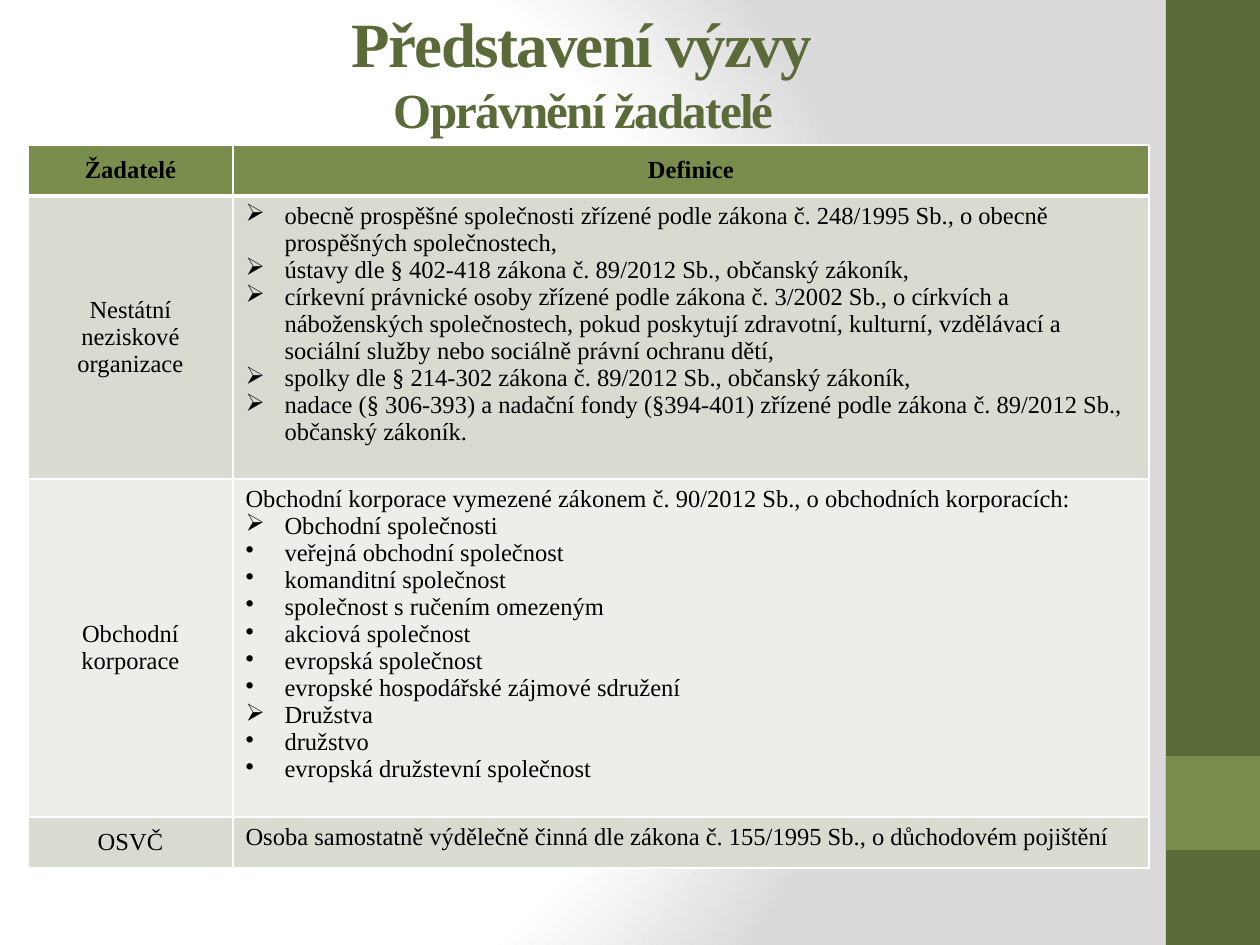
"""Build the slide listing the eligible applicants of a call."""
from dataclasses import dataclass

from pptx import Presentation
from pptx.dml.color import RGBColor
from pptx.enum.shapes import MSO_SHAPE
from pptx.enum.text import MSO_ANCHOR, PP_ALIGN
from pptx.oxml import parse_xml
from pptx.oxml.ns import nsdecls, qn
from pptx.util import Emu, Pt

DARK = RGBColor(0x5A, 0x6A, 0x39)
GREEN = RGBColor(0x79, 0x8E, 0x4C)
BAND = RGBColor(0xD7, 0xDB, 0xD0)
PALE = RGBColor(0xEC, 0xEE, 0xE9)
BLACK = RGBColor(0, 0, 0)
WHITE = RGBColor(0xFF, 0xFF, 0xFF)
GREY = RGBColor(0xDA, 0xDA, 0xDA)
FONT = "Times New Roman"
ARROW, DOT = "➢", "•"
INDENT = 39


@dataclass
class Block:
    x: int
    y: int
    w: int
    h: int
    color: RGBColor


@dataclass
class Item:
    text: str
    bullet: str = ""


@dataclass
class Row:
    height: int
    color: RGBColor
    label: str
    items: list[Item]
    align: PP_ALIGN = PP_ALIGN.JUSTIFY
    header: bool = False


def px(n: int) -> Emu:
    return Emu(round(n * 914400 / 126))


def bulleted(bullet: str, *texts: str) -> list[Item]:
    return [Item(text, bullet) for text in texts]


BLOCKS = [Block(1166, 0, 94, 945, DARK), Block(1166, 756, 94, 94, GREEN)]
COLUMNS = [205, 916]
ROWS = [
    Row(51, GREEN, "Žadatelé", [Item("Definice")], PP_ALIGN.CENTER, True),
    Row(283, BAND, "Nestátní neziskové organizace", bulleted(
        ARROW,
        "obecně prospěšné společnosti zřízené podle zákona č. 248/1995 Sb., "
        "o obecně prospěšných společnostech,",
        "ústavy dle § 402-418 zákona č. 89/2012 Sb., občanský zákoník,",
        "církevní právnické osoby zřízené podle zákona č. 3/2002 Sb., o církvích a "
        "náboženských společnostech, pokud poskytují zdravotní, kulturní, vzdělávací a "
        "sociální služby nebo sociálně právní ochranu dětí,",
        "spolky dle § 214-302 zákona č. 89/2012 Sb., občanský zákoník,",
        "nadace (§ 306-393) a nadační fondy (§394-401) zřízené podle zákona "
        "č. 89/2012 Sb., občanský zákoník.",
    ), PP_ALIGN.LEFT),
    Row(338, PALE, "Obchodní korporace", [
        Item("Obchodní korporace vymezené zákonem č. 90/2012 Sb., o obchodních korporacích:"),
        Item("Obchodní společnosti", ARROW),
        *bulleted(DOT, "veřejná obchodní společnost", "komanditní společnost",
                  "společnost s ručením omezeným", "akciová společnost",
                  "evropská společnost", "evropské hospodářské zájmové sdružení"),
        Item("Družstva", ARROW),
        *bulleted(DOT, "družstvo", "evropská družstevní společnost"),
    ]),
    Row(51, BAND, "OSVČ", [
        Item("Osoba samostatně výdělečně činná dle zákona č. 155/1995 Sb., "
             "o důchodovém pojištění"),
    ]),
]


def set_background(slide) -> None:
    slide.background.fill.gradient()
    grad = next(slide.element.iter(qn("a:gradFill")))
    stops = "".join(
        f'<a:gs pos="{pos}"><a:srgbClr val="{color}"/></a:gs>'
        for pos, color in ((0, WHITE), (75000, WHITE), (100000, GREY)))
    grad.getparent().replace(grad, parse_xml(
        f'<a:gradFill {nsdecls("a")} rotWithShape="1"><a:gsLst>{stops}</a:gsLst>'
        '<a:path path="circle"><a:fillToRect l="20000" t="50000" r="100000" b="50000"/>'
        '</a:path></a:gradFill>'))


def add_block(slide, block: Block) -> None:
    sp = slide.shapes.add_shape(MSO_SHAPE.RECTANGLE, px(block.x), px(block.y),
                                px(block.w), px(block.h))
    sp.shadow.inherit = False
    sp.fill.solid()
    sp.fill.fore_color.rgb = block.color
    sp.line.fill.background()


def style_font(r, size: int, color: RGBColor, bold: bool) -> None:
    r.font.name = FONT
    r.font.size = Pt(size)
    r.font.color.rgb = color
    r.font.bold = bold


def add_title(slide) -> None:
    tf = slide.shapes.add_textbox(px(64), px(-13), px(1050), px(157)).text_frame
    tf.word_wrap = True
    tf.vertical_anchor = MSO_ANCHOR.MIDDLE
    tf.margin_top, tf.margin_bottom = px(18), px(6)
    p = tf.paragraphs[0]
    p.text = "Představení výzvy \vOprávnění žadatelé "
    p.alignment = PP_ALIGN.CENTER
    for r, size in zip(p.runs, (36, 28)):
        style_font(r, size, DARK, True)
        r.font._element.set("spc", "-100")


def add_bullet(p, bullet: str) -> None:
    pPr = p._p.get_or_add_pPr()
    pPr.set("marL", str(px(INDENT)))
    pPr.set("indent", str(px(-INDENT)))
    pPr.append(parse_xml(f'<a:buChar {nsdecls("a")} char="{bullet}"/>'))


def set_borders(cell, top: int, bottom: int) -> None:
    tcPr = cell._tc.get_or_add_tcPr()
    for i, (side, width) in enumerate((("L", 1), ("R", 1), ("T", top), ("B", bottom))):
        tcPr.insert(i, parse_xml(
            f'<a:ln{side} {nsdecls("a")} w="{Pt(width)}"><a:solidFill>'
            f'<a:srgbClr val="{WHITE}"/></a:solidFill></a:ln{side}>'))


def fill_cell(cell, items: list[Item], align: PP_ALIGN, middle: bool,
              color: RGBColor, bold: bool) -> None:
    cell.fill.solid()
    cell.fill.fore_color.rgb = color
    cell.vertical_anchor = MSO_ANCHOR.MIDDLE if middle else MSO_ANCHOR.TOP
    tf = cell.text_frame
    tf.text = "\n".join(item.text for item in items)
    for p, item in zip(tf.paragraphs, items):
        p.alignment = align
        style_font(p.runs[0], 14, BLACK, bold)
        if item.bullet:
            add_bullet(p, item.bullet)


def add_applicants(slide) -> None:
    table = slide.shapes.add_table(
        len(ROWS), len(COLUMNS), px(28), px(145), px(sum(COLUMNS)),
        px(sum(row.height for row in ROWS))).table
    table.horz_banding = False
    for column, width in zip(table.columns, COLUMNS):
        column.width = px(width)
    for i, row in enumerate(ROWS):
        table.rows[i].height = px(row.height)
        label, definition = table.cell(i, 0), table.cell(i, 1)
        fill_cell(label, [Item(row.label)], PP_ALIGN.CENTER, True, row.color, row.header)
        fill_cell(definition, row.items, row.align, row.header, row.color, row.header)
        for cell in (label, definition):
            set_borders(cell, 3 if i == 1 else 1, 3 if row.header else 1)


def main() -> None:
    prs = Presentation()
    prs.slide_width, prs.slide_height = px(1260), px(945)
    slide = prs.slides.add_slide(prs.slide_layouts[6])
    set_background(slide)
    for block in BLOCKS:
        add_block(slide, block)
    add_title(slide)
    add_applicants(slide)
    prs.save("out.pptx")


if __name__ == "__main__":
    main()
